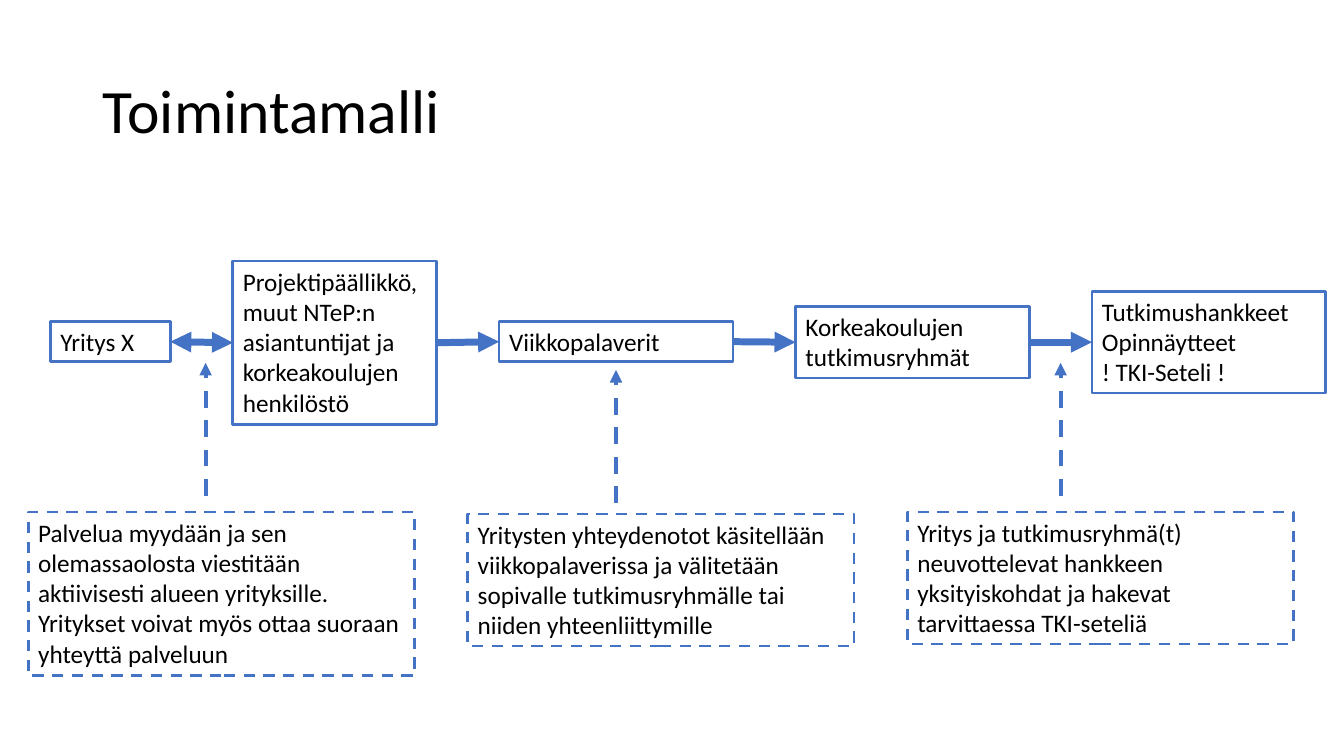
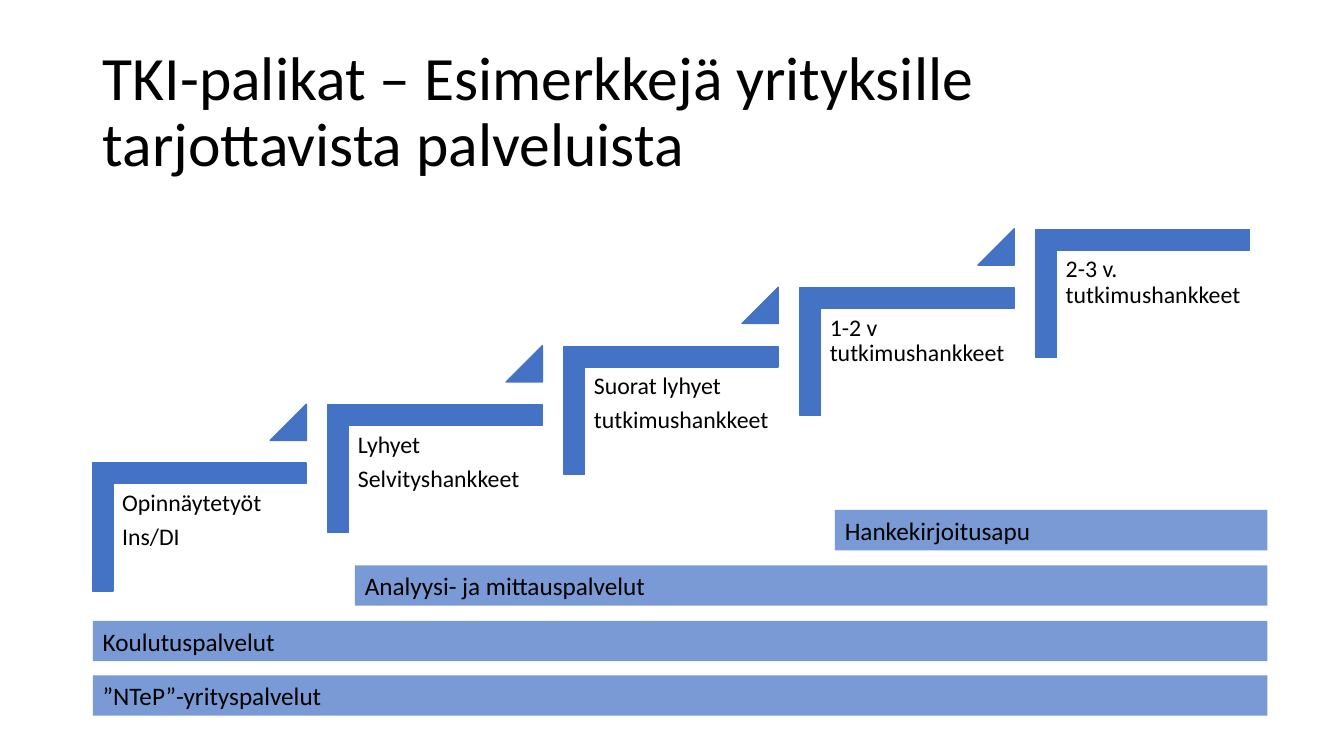
from lxml import etree
from pptx import Presentation
from pptx.dml.color import RGBColor
from pptx.enum.dml import MSO_LINE
from pptx.enum.shapes import MSO_CONNECTOR, MSO_SHAPE
from pptx.enum.text import MSO_ANCHOR, MSO_AUTO_SIZE, PP_ALIGN
from pptx.oxml.ns import qn
from pptx.util import Inches, Pt

BLUE = "4472C4"
BLACK = "000000"
FONT = "Calibri"
TITLE_ONLY = 5
LEFT_SITE, RIGHT_SITE = 1, 3
BAR_OPACITY = 71
DASH = MSO_LINE.DASH
STRAIGHT = MSO_CONNECTOR.STRAIGHT
CORNER = MSO_SHAPE.CORNER
TRIANGLE = MSO_SHAPE.ISOSCELES_TRIANGLE
GROW = MSO_AUTO_SIZE.SHAPE_TO_FIT_TEXT
FIXED = MSO_AUTO_SIZE.NONE
LEFT = PP_ALIGN.LEFT
TOP, MIDDLE = MSO_ANCHOR.TOP, MSO_ANCHOR.MIDDLE

PROCESS_BOXES = [
    (0.5, 3.19, 1.19, 0.4, ["Yritys X"]),
    (2.31, 2.59, 2.02, 1.62,
     ["Projektipäällikkö,",
      "muut NTeP:n asiantuntijat ja korkeakoulujen henkilöstö"]),
    (4.95, 3.19, 2.32, 0.4, ["Viikkopalaverit"]),
    (7.89, 3.04, 2.32, 0.71, ["Korkeakoulujen tutkimusryhmät"]),
    (10.83, 2.89, 2.32, 1.01,
     ["Tutkimushankkeet", "Opinnäytteet", "! TKI-Seteli !"]),
]
NOTE_BOXES = [
    (0.28, 5.08, 3.83, 1.62,
     ["Palvelua myydään ja sen olemassaolosta viestitään aktiivisesti "
      "alueen yrityksille.",
      "Yritykset voivat myös ottaa suoraan yhteyttä palveluun"]),
    (4.64, 5.1, 3.83, 1.31,
     ["Yritysten yhteydenotot käsitellään viikkopalaverissa ja välitetään "
      "sopivalle tutkimusryhmälle tai niiden yhteenliittymille"]),
    (9, 5.08, 3.83, 1.31,
     ["Yritys ja tutkimusryhmä(t) neuvottelevat hankkeen yksityiskohdat "
      "ja hakevat tarvittaessa TKI-seteliä"]),
]
NOTE_ARROWS = [(2.04, 4.92), (6.11, 4.99), (10.52, 4.92)]
NOTE_ARROW_LENGTH = 1.32

STEPS = [
    ["Opinnäytetyöt", "Ins/DI"],
    ["Lyhyet", "Selvityshankkeet"],
    ["Suorat lyhyet", "tutkimushankkeet"],
    ["1-2 v tutkimushankkeet"],
    ["2-3 v. tutkimushankkeet"],
]
STEP_RUN, STEP_RISE = 2.34, 0.58

BARS_RIGHT = 12.57
SERVICE_BARS = [
    (8.28, 5.06, "Hankekirjoitusapu"),
    (3.52, 5.61, "Analyysi- ja mittauspalvelut"),
    (0.92, 6.16, "Koulutuspalvelut"),
    (0.92, 6.7, "”NTeP”-yrityspalvelut"),
]


def color(hex_value):
    """Turn a hex string into a colour."""
    return RGBColor.from_string(hex_value)


def inches(*lengths):
    """Convert plain numbers to lengths."""
    return [Inches(length) for length in lengths]


def set_text(frame, lines, size=18, spacing=1.0, after=0, anchor=TOP,
             auto_size=GROW, inset=None):
    """Fill a text frame with one left-aligned paragraph per line."""
    frame.word_wrap = True
    frame.auto_size = auto_size
    frame.vertical_anchor = anchor
    if inset is not None:
        frame.margin_left = frame.margin_right = Inches(inset)
        frame.margin_top = frame.margin_bottom = Inches(inset)
    for index, line in enumerate(lines):
        paragraph = frame.add_paragraph() if index else frame.paragraphs[0]
        paragraph.alignment = LEFT
        paragraph.line_spacing = spacing
        paragraph.space_after = Pt(after)
        run = paragraph.add_run()
        run.text = line
        run.font.name = FONT
        run.font.size = Pt(size)
        run.font.color.rgb = color(BLACK)


def set_line(line, width, dash=None):
    """Give an outline or connector the blue stroke."""
    line.color.rgb = color(BLUE)
    line.width = Pt(width)
    if dash is not None:
        line.dash_style = dash


def add_titled_slide(presentation, title):
    """Add a slide with the shared title style."""
    slide = presentation.slides.add_slide(
        presentation.slide_layouts[TITLE_ONLY])
    shape = slide.shapes.title
    shape.left, shape.top, shape.width, shape.height = inches(
        0.92, 0.4, 11.5, 1.45)
    set_text(shape.text_frame, [title], size=44, spacing=0.9,
             anchor=MIDDLE, auto_size=FIXED)
    return slide


def add_outlined_box(slide, left, top, width, height, lines, dash=None):
    """Add a text box with a blue outline."""
    box = slide.shapes.add_textbox(*inches(left, top, width, height))
    set_line(box.line, 2, dash)
    set_text(box.text_frame, lines)
    return box


def add_arrow(slide, start, end, width, dash=None, both_ends=False):
    """Add a straight arrow between two points given in inches."""
    arrow = slide.shapes.add_connector(STRAIGHT, *inches(*start, *end))
    set_line(arrow.line, width, dash)
    properties = arrow.element.spPr
    stroke = properties.find(qn("a:ln"))
    for tag in ["a:headEnd", "a:tailEnd"] if both_ends else ["a:tailEnd"]:
        etree.SubElement(stroke, qn(tag), type="triangle")
    etree.SubElement(properties, qn("a:effectLst"))
    return arrow


def add_solid_shape(slide, kind, left, top, width, height, adjustments):
    """Add a blue preset shape with its adjustments."""
    shape = slide.shapes.add_shape(kind, *inches(left, top, width, height))
    shape.shadow.inherit = False
    shape.fill.solid()
    shape.fill.fore_color.rgb = color(BLUE)
    set_line(shape.line, 1)
    for index, value in enumerate(adjustments):
        shape.adjustments[index] = value
    return shape


def add_step(slide, index, lines):
    """Add one stair step with its label and the triangle leading upward."""
    across, rise = index * STEP_RUN, index * STEP_RISE
    corner = add_solid_shape(slide, CORNER, 1.34 + across, 4.17 - rise,
                             1.27, 2.12, [0.161, 0.161])
    corner.rotation = 90
    label = slide.shapes.add_textbox(
        *inches(1.14 + across, 4.8 - rise, 1.91, 1.68))
    set_text(label.text_frame, lines, size=17, spacing=0.9, after=6,
             auto_size=FIXED, inset=0.07)
    if index < len(STEPS) - 1:
        add_solid_shape(slide, TRIANGLE, 2.68 + across, 4.01 - rise,
                        0.36, 0.36, [1])


def add_service_bar(slide, left, top, label):
    """Add a translucent bar that reaches the shared right edge."""
    bar = slide.shapes.add_textbox(
        *inches(left, top, BARS_RIGHT - left, 0.4))
    bar.fill.solid()
    bar.fill.fore_color.rgb = color(BLUE)
    fill_color = bar.element.spPr.find(f"{qn('a:solidFill')}/{qn('a:srgbClr')}")
    etree.SubElement(fill_color, qn("a:alpha"), val=str(BAR_OPACITY * 1000))
    set_text(bar.text_frame, [label])


def build_process_slide(presentation):
    """Build the operating model flow."""
    slide = add_titled_slide(presentation, "Toimintamalli")
    boxes = [add_outlined_box(slide, *box) for box in PROCESS_BOXES]
    for index, (source, target) in enumerate(zip(boxes, boxes[1:])):
        arrow = add_arrow(slide, (0, 0), (1, 1), 5, both_ends=index == 0)
        arrow.begin_connect(source, RIGHT_SITE)
        arrow.end_connect(target, LEFT_SITE)
    for box in NOTE_BOXES:
        add_outlined_box(slide, *box, dash=DASH)
    for left, bottom in NOTE_ARROWS:
        add_arrow(slide, (left, bottom), (left, bottom - NOTE_ARROW_LENGTH),
                  3, dash=DASH)


def build_services_slide(presentation):
    """Build the staircase of projects above the service bars."""
    slide = add_titled_slide(
        presentation,
        "TKI-palikat – Esimerkkejä yrityksille tarjottavista palveluista")
    for index, lines in enumerate(STEPS):
        add_step(slide, index, lines)
    for bar in SERVICE_BARS:
        add_service_bar(slide, *bar)


def main():
    """Create and save the presentation."""
    presentation = Presentation()
    presentation.slide_width = Inches(13.33)
    presentation.slide_height = Inches(7.5)
    build_process_slide(presentation)
    build_services_slide(presentation)
    presentation.save("out.pptx")


if __name__ == "__main__":
    main()
